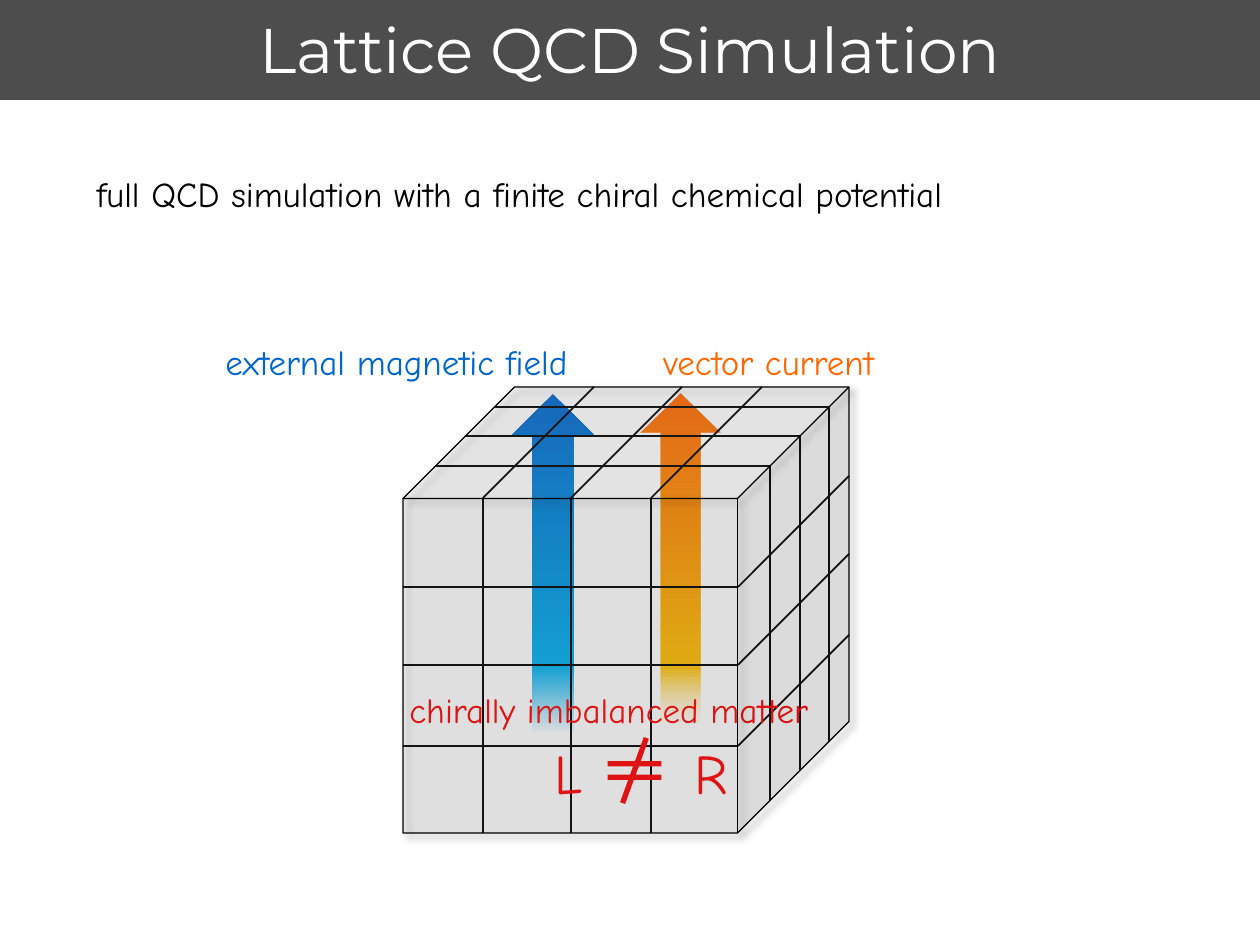
import dataclasses
import typing

import lxml.etree
import pptx
import pptx.dml.color
import pptx.enum.dml
import pptx.enum.shapes
import pptx.enum.text
import pptx.oxml.ns
import pptx.util

PX = 914400 / 126
COLORS = {
    "black": "000000",
    "white": "FFFFFF",
    "banner": "4D4D4D",
    "cube": "808080",
    "blue": "0066CC",
    "sky": "00B0F0",
    "orange": "FF6600",
    "gold": "FFC000",
    "red": "FF0000",
}
SHAPES = pptx.enum.shapes.MSO_SHAPE


@dataclasses.dataclass(frozen=True)
class Box:
    left: int
    top: int
    width: int
    height: int

    def lengths(self) -> list[int]:
        return [px(value) for value in dataclasses.astuple(self)]


@dataclasses.dataclass(frozen=True)
class Label:
    text: str
    box: Box
    size: int
    color: str
    tab: int = 0


@dataclasses.dataclass(frozen=True)
class FieldArrow:
    box: Box
    start: str
    middle: str
    end_opacity: int


LABELS = [
    Label("external magnetic field", Box(213, 334, 478, 55), 20, "blue"),
    Label("vector current", Box(651, 334, 297, 55), 20, "orange"),
    Label("chirally imbalanced matter", Box(397, 682, 476, 55), 20, "red"),
    Label("L\tR", Box(542, 732, 217, 81), 32, "red", tab=140),
]
ARROWS = [
    FieldArrow(Box(512, 394, 82, 340), "blue", "sky", 100),
    FieldArrow(Box(641, 394, 79, 341), "orange", "gold", 0),
]
CUBE = Box(403, 387, 446, 446)
DEPTH = 111
COLUMNS = [80, 168, 248]
ROWS = [89, 167, 248]
LAYERS = [32, 62, 91]


def px(value: int) -> int:
    return round(value * PX)


def rgb(name: str) -> pptx.dml.color.RGBColor:
    return pptx.dml.color.RGBColor.from_string(COLORS[name])


def add_element(parent: typing.Any, tag: str, **attributes: typing.Any) -> typing.Any:
    values = {name: str(value) for name, value in attributes.items()}
    return lxml.etree.SubElement(parent, pptx.oxml.ns.qn(tag), values)


def add_color(parent: typing.Any, name: str, opacity: int) -> None:
    color = add_element(parent, "a:srgbClr", val=COLORS[name])
    if opacity < 100:
        add_element(color, "a:alpha", val=opacity * 1000)


def place(shape: typing.Any, box: Box) -> None:
    shape.left, shape.top, shape.width, shape.height = box.lengths()


def set_font(paragraph: typing.Any, name: str, size: int, color: str) -> None:
    paragraph.font.name = name
    paragraph.font.size = pptx.util.Pt(size)
    paragraph.font.color.rgb = rgb(color)


def fill_title(title: typing.Any) -> None:
    place(title, Box(0, -4, 1260, 104))
    title.fill.solid()
    title.fill.fore_color.rgb = rgb("banner")
    title.text_frame.text = "Lattice QCD Simulation"
    title.text_frame.vertical_anchor = pptx.enum.text.MSO_ANCHOR.MIDDLE
    paragraph = title.text_frame.paragraphs[0]
    paragraph.alignment = pptx.enum.text.PP_ALIGN.CENTER
    set_font(paragraph, "Montserrat", 36, "white")


def fill_body(body: typing.Any) -> None:
    place(body, Box(84, 145, 1033, 69))
    body.text_frame.text = "full QCD simulation with a finite chiral chemical potential"
    body.text_frame.auto_size = pptx.enum.text.MSO_AUTO_SIZE.NONE
    paragraph = body.text_frame.paragraphs[0]
    paragraph.line_spacing = 1.5
    paragraph.space_before = pptx.util.Pt(0)
    set_font(paragraph, "Comic Neue", 20, "black")
    properties = paragraph._p.get_or_add_pPr()
    properties.set("marL", "0")
    properties.set("indent", "0")
    properties.insert_element_before(
        lxml.etree.SubElement(properties, pptx.oxml.ns.qn("a:buNone")), "a:defRPr"
    )


def add_label(slide: typing.Any, label: Label) -> None:
    frame = slide.shapes.add_textbox(*label.box.lengths()).text_frame
    frame.word_wrap = True
    frame.text = label.text
    paragraph = frame.paragraphs[0]
    set_font(paragraph, "Comic Neue", label.size, label.color)
    if label.tab:
        properties = paragraph._p.get_or_add_pPr()
        tabs = add_element(properties, "a:tabLst")
        add_element(tabs, "a:tab", pos=px(label.tab), algn="l")
        properties.insert_element_before(tabs, "a:defRPr")


def add_field_arrow(slide: typing.Any, arrow: FieldArrow) -> None:
    shape = slide.shapes.add_shape(SHAPES.UP_ARROW, *arrow.box.lengths())
    shape.shadow.inherit = False
    shape.line.fill.background()
    shape.fill.gradient()
    shape.fill.gradient_angle = 270
    stops = shape._element.spPr.find(".//" + pptx.oxml.ns.qn("a:gsLst"))
    for stop in list(stops):
        stops.remove(stop)
    for position, name, opacity in (
        (0, arrow.start, 100),
        (80, arrow.middle, 100),
        (100, "white", arrow.end_opacity),
    ):
        stop = add_element(stops, "a:gs", pos=position * 1000)
        add_color(stop, name, opacity)


def add_grid_line(slide: typing.Any, x1: int, y1: int, x2: int, y2: int) -> None:
    connector = slide.shapes.add_connector(
        pptx.enum.shapes.MSO_CONNECTOR.STRAIGHT, px(x1), px(y1), px(x2), px(y2)
    )
    connector.line.color.rgb = rgb("black")
    connector.line.width = pptx.util.Pt(1)
    add_element(connector._element.spPr, "a:effectLst")


def add_lattice(slide: typing.Any) -> None:
    left, front_top = CUBE.left, CUBE.top + DEPTH
    right, bottom = CUBE.left + CUBE.width - DEPTH, CUBE.top + CUBE.height
    for column in COLUMNS:
        x = left + column
        add_grid_line(slide, x, front_top, x, bottom)
        add_grid_line(slide, x + DEPTH, CUBE.top, x, front_top)
    for row in ROWS:
        y = front_top + row
        add_grid_line(slide, left, y, right, y)
        add_grid_line(slide, right + DEPTH, y - DEPTH, right, y)
    for layer in LAYERS:
        x, y = right + layer, front_top - layer
        add_grid_line(slide, left + layer, y, x, y)
        add_grid_line(slide, x, y, x, bottom - layer)


def add_not_equal(slide: typing.Any) -> None:
    sign = slide.shapes.add_shape(SHAPES.MATH_NOT_EQUAL, *Box(598, 737, 73, 67).lengths())
    sign.shadow.inherit = False
    for index, value in enumerate((0.08, 66, 0.12)):
        sign.adjustments[index] = value
    sign.fill.solid()
    sign.fill.fore_color.rgb = rgb("red")
    sign.line.fill.background()


def add_cube(slide: typing.Any) -> None:
    cube = slide.shapes.add_shape(SHAPES.CUBE, *CUBE.lengths())
    cube.adjustments[0] = 0.25
    cube.fill.solid()
    cube.fill.fore_color.rgb = rgb("cube")
    cube.line.color.rgb = rgb("black")
    cube.line.width = pptx.util.Pt(0.75)
    cube.shadow.inherit = False
    properties = cube._element.spPr
    fill_color = properties.find(pptx.oxml.ns.qn("a:solidFill"))[0]
    add_element(fill_color, "a:alpha", val=15000)
    shadow = add_element(
        properties.find(pptx.oxml.ns.qn("a:effectLst")), "a:outerShdw",
        blurRad=pptx.util.Pt(4), dist=pptx.util.Pt(3), dir=45 * 60000, rotWithShape=0,
    )
    add_color(shadow, "black", 40)


def main() -> None:
    presentation = pptx.Presentation()
    presentation.slide_width = px(1260)
    presentation.slide_height = px(945)
    slide = presentation.slides.add_slide(presentation.slide_layouts[1])
    fill_title(slide.shapes.title)
    fill_body(slide.placeholders[1])
    for arrow in ARROWS:
        add_field_arrow(slide, arrow)
    add_lattice(slide)
    for label in LABELS:
        add_label(slide, label)
    add_not_equal(slide)
    add_cube(slide)
    presentation.save("out.pptx")


if __name__ == "__main__":
    main()
